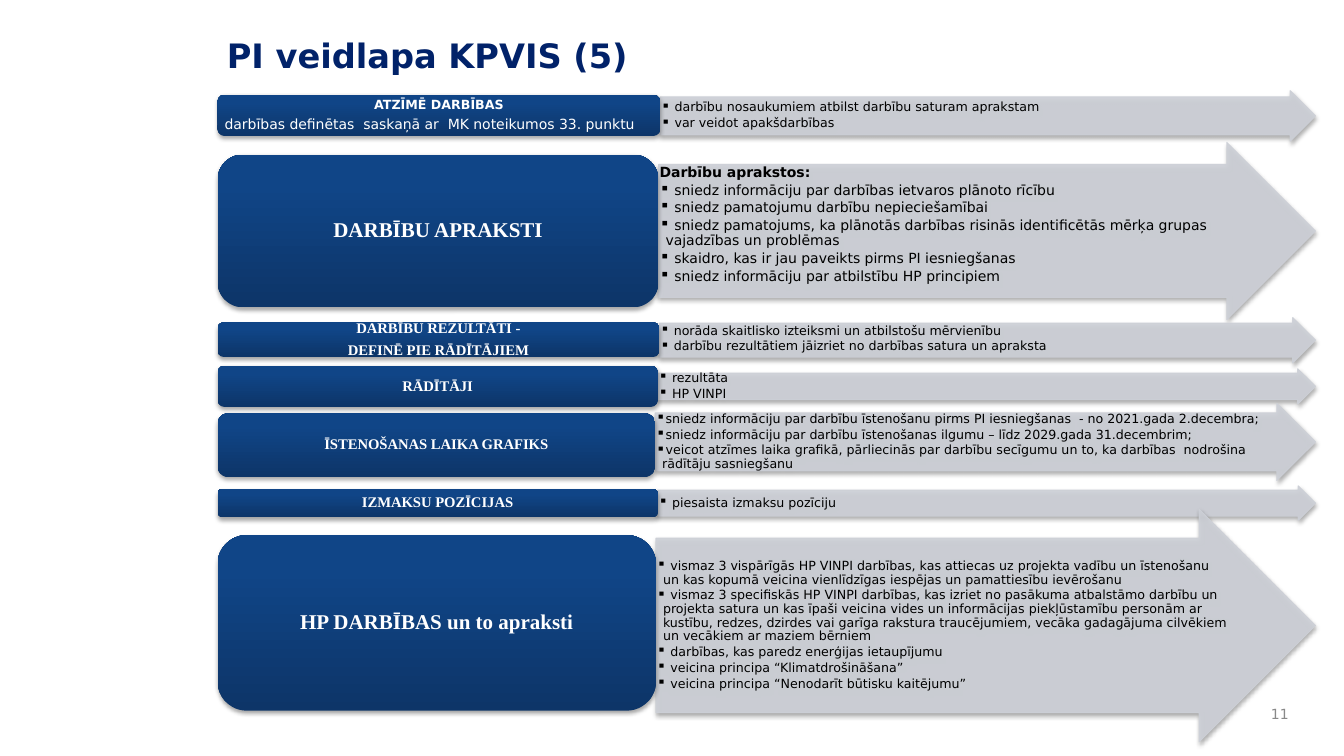
from copy import deepcopy
from dataclasses import dataclass

from lxml import etree
from pptx import Presentation
from pptx import util as u
from pptx.dml.color import RGBColor
from pptx.enum import shapes, text
from pptx.oxml.ns import qn

COLUMNS, ROWS = 160, 90
LABEL_LEFT, ARROW_RIGHT = 25.9, 156.6
SANS, SERIF = "DejaVu Sans", "Times New Roman"
MIDDLE, TOP = text.MSO_ANCHOR.MIDDLE, text.MSO_ANCHOR.TOP
LEFT, CENTER, RIGHT = text.PP_ALIGN.LEFT, text.PP_ALIGN.CENTER, text.PP_ALIGN.RIGHT


def rgb(color):
    return RGBColor.from_string(color)


@dataclass
class Line:
    words: str
    size: float = 9
    font: str = SANS
    color: str = "000000"
    bold: bool = False
    align: int = LEFT
    bullet: bool = False
    indent: float = 0
    gap: float = 0
    spacing: float = 1


def label_line(words, size=10.5, font=SERIF, bold=True, align=CENTER):
    return Line(words, size, font, "FFFFFF", bold, align, gap=0.4, spacing=0.9)


def point(words, size=9, bold=False, bullet=True):
    return Line(words, size, bold=bold, bullet=bullet, indent=0.06, gap=0.18, spacing=0.9)


@dataclass
class Step:
    """A label and its arrow: shared edge in columns, centres and heights in rows."""
    edge: float
    label_center: float
    label_height: float
    arrow_center: float
    arrow_height: float
    label: list
    points: list
    anchor: int = MIDDLE


class SlideBuilder:
    def __init__(self, presentation):
        self.slide = presentation.slides.add_slide(presentation.slide_layouts[5])
        self.column = presentation.slide_width / COLUMNS
        self.row = presentation.slide_height / ROWS

    def box(self, left, top, width, height):
        return (round(left * self.column), round(top * self.row),
                round(width * self.column), round(height * self.row))

    def add_lines(self, shape, lines, anchor=MIDDLE, inset=(0.1, 0.05)):
        frame = shape.text_frame
        frame.word_wrap, frame.auto_size = True, text.MSO_AUTO_SIZE.NONE
        frame.vertical_anchor = anchor
        frame.margin_left = frame.margin_right = u.Inches(inset[0])
        frame.margin_top = frame.margin_bottom = u.Inches(inset[1])
        for number, line in enumerate(lines):
            paragraph = frame.add_paragraph() if number else frame.paragraphs[0]
            properties = paragraph._p.get_or_add_pPr()
            if line.indent:
                paragraph.level = 1
                properties.set("marL", str(u.Inches(line.indent)))
                properties.set("indent", str(-u.Inches(line.indent)))
            if line.bullet:
                etree.SubElement(properties, qn("a:buChar"), char="▪")
            paragraph.alignment = line.align
            paragraph.line_spacing = line.spacing
            paragraph.space_after = u.Pt(line.size * line.gap)
            run = paragraph.add_run()
            run.text = line.words
            run.font.name, run.font.size = line.font, u.Pt(line.size)
            run.font.bold, run.font.color.rgb = line.bold, rgb(line.color)

    def title(self, words, *place):
        title = self.slide.shapes.title
        title.left, title.top, title.width, title.height = self.box(*place)
        self.add_lines(title, [Line(words, 24, color="012269", bold=True)], TOP)

    def page_number(self, words, *place):
        box = self.slide.shapes.add_textbox(*self.box(*place))
        self.add_lines(box, [Line(words, 10, color="898989", align=RIGHT)])

    def add_shadow(self, shape):
        shape.shadow.inherit = False
        effects = shape._element.spPr.find(qn("a:effectLst"))
        shadow = etree.SubElement(effects, qn("a:outerShdw"), blurRad=str(u.Pt(3.1)),
                                  dist=str(u.Pt(1.8)), dir="5400000", rotWithShape="0")
        color = etree.SubElement(shadow, qn("a:srgbClr"), val="000000")
        etree.SubElement(color, qn("a:alpha"), val="35000")

    def arrow(self, step):
        shape = self.slide.shapes.add_shape(
            shapes.MSO_SHAPE.RIGHT_ARROW,
            *self.box(step.edge, step.arrow_center - step.arrow_height / 2,
                      ARROW_RIGHT - step.edge, step.arrow_height))
        shape.adjustments[0] = 0.75
        shape.fill.solid()
        shape.fill.fore_color.rgb = shape.line.color.rgb = rgb("CDD0D7")
        shape.line.width = u.Pt(0.75)
        for color in shape._element.spPr.iter(qn("a:srgbClr")):
            etree.SubElement(color, qn("a:alpha"), val="90000")
        self.add_shadow(shape)
        self.add_lines(shape, step.points, step.anchor, (0.01, 0.01))

    def label(self, step):
        shape = self.slide.shapes.add_shape(
            shapes.MSO_SHAPE.ROUNDED_RECTANGLE,
            *self.box(LABEL_LEFT, step.label_center - step.label_height / 2,
                      step.edge - LABEL_LEFT, step.label_height))
        shape.fill.gradient()
        shape.fill.gradient_angle = 90
        stops = shape._element.spPr.find(qn("a:gradFill")).find(qn("a:gsLst"))
        stops.append(deepcopy(stops[-1]))
        colors = ((0, "0D3568"), (0.8, "104587"), (1, "0E458A"))
        for stop, (position, color) in zip(shape.fill.gradient_stops, colors):
            stop.position, stop.color.rgb = position, rgb(color)
        shape.line.fill.background()
        self.add_shadow(shape)
        self.add_lines(shape, step.label, inset=(0.05, 0.02))


STEPS = [
    Step(78.6, 13.74, 4.9, 13.8, 6,
         [label_line("ATZĪMĒ DARBĪBAS", 9, SANS),
          label_line("darbības definētas  saskaņā ar  MK noteikumos 33. punktu",
                     10, SANS, False, LEFT)],
         [point(" darbību nosaukumiem atbilst darbību saturam aprakstam"),
          point(" var veidot apakšdarbības")]),
    Step(78.4, 27.5, 18.2, 27.5, 21.1,
         [label_line("DARBĪBU APRAKSTI", 15)],
         [point("Darbību aprakstos:", 10, True, False),
          point(" sniedz informāciju par darbības ietvaros plānoto rīcību", 10),
          point(" sniedz pamatojumu darbību nepieciešamībai", 10),
          point(" sniedz pamatojums, ka plānotās darbības risinās identificētās "
                "mērķa grupas vajadzības un problēmas", 10),
          point(" skaidro, kas ir jau paveikts pirms PI iesniegšanas", 10),
          point(" sniedz informāciju par atbilstību HP principiem", 10)], TOP),
    Step(78.5, 40.44, 4.1, 40.5, 5.4,
         [label_line("DARBĪBU REZULTĀTI -"), label_line("DEFINĒ PIE RĀDĪTĀJIEM")],
         [point(" norāda skaitlisko izteiksmi un atbilstošu mērvienību"),
          point(" darbību rezultātiem jāizriet no darbības satura un apraksta")], TOP),
    Step(78.3, 46, 4.9, 46, 4.2,
         [label_line("RĀDĪTĀJI")],
         [point(" rezultāta"), point(" HP VINPI")]),
    Step(78, 53, 7.6, 52.6, 9.2,
         [label_line("ĪSTENOŠANAS LAIKA GRAFIKS")],
         [point("sniedz informāciju par darbību īstenošanu pirms PI iesniegšanas  "
                "- no 2021.gada 2.decembra;"),
          point("sniedz informāciju par darbību īstenošanas ilgumu – līdz "
                "2029.gada 31.decembrim;"),
          point("veicot atzīmes laika grafikā, pārliecinās par darbību secīgumu "
                "un to, ka darbības  nodrošina rādītāju sasniegšanu")]),
    Step(78.3, 59.9, 3.4, 59.9, 4.1,
         [label_line("IZMAKSU POZĪCIJAS")],
         [point(" piesaista izmaksu pozīciju")]),
    Step(78.1, 74.16, 20.9, 74.46, 27.7,
         [label_line("HP DARBĪBAS un to apraksti", 15)],
         [point(" vismaz 3 vispārīgās HP VINPI darbības, kas attiecas uz projekta "
                "vadību un īstenošanu un kas kopumā veicina vienlīdzīgas iespējas "
                "un pamattiesību ievērošanu"),
          point(" vismaz 3 specifiskās HP VINPI darbības, kas izriet no pasākuma "
                "atbalstāmo darbību un projekta satura un kas īpaši veicina vides "
                "un informācijas piekļūstamību personām ar kustību, redzes, dzirdes "
                "vai garīga rakstura traucējumiem, vecāka gadagājuma cilvēkiem un "
                "vecākiem ar maziem bērniem"),
          point(" darbības, kas paredz enerģijas ietaupījumu"),
          point(" veicina principa “Klimatdrošināšana”"),
          point(" veicina principa “Nenodarīt būtisku kaitējumu”")]),
]


def main():
    presentation = Presentation()
    presentation.slide_width, presentation.slide_height = u.Inches(13.33), u.Inches(7.5)
    builder = SlideBuilder(presentation)
    builder.title("PI veidlapa KPVIS (5)", 25.8, 3.5, 115.7, 8.2)
    builder.page_number("11", 149.3, 83, 5.3, 4)
    for step in STEPS:
        builder.arrow(step)
        builder.label(step)
    presentation.save("out.pptx")


if __name__ == "__main__":
    main()
